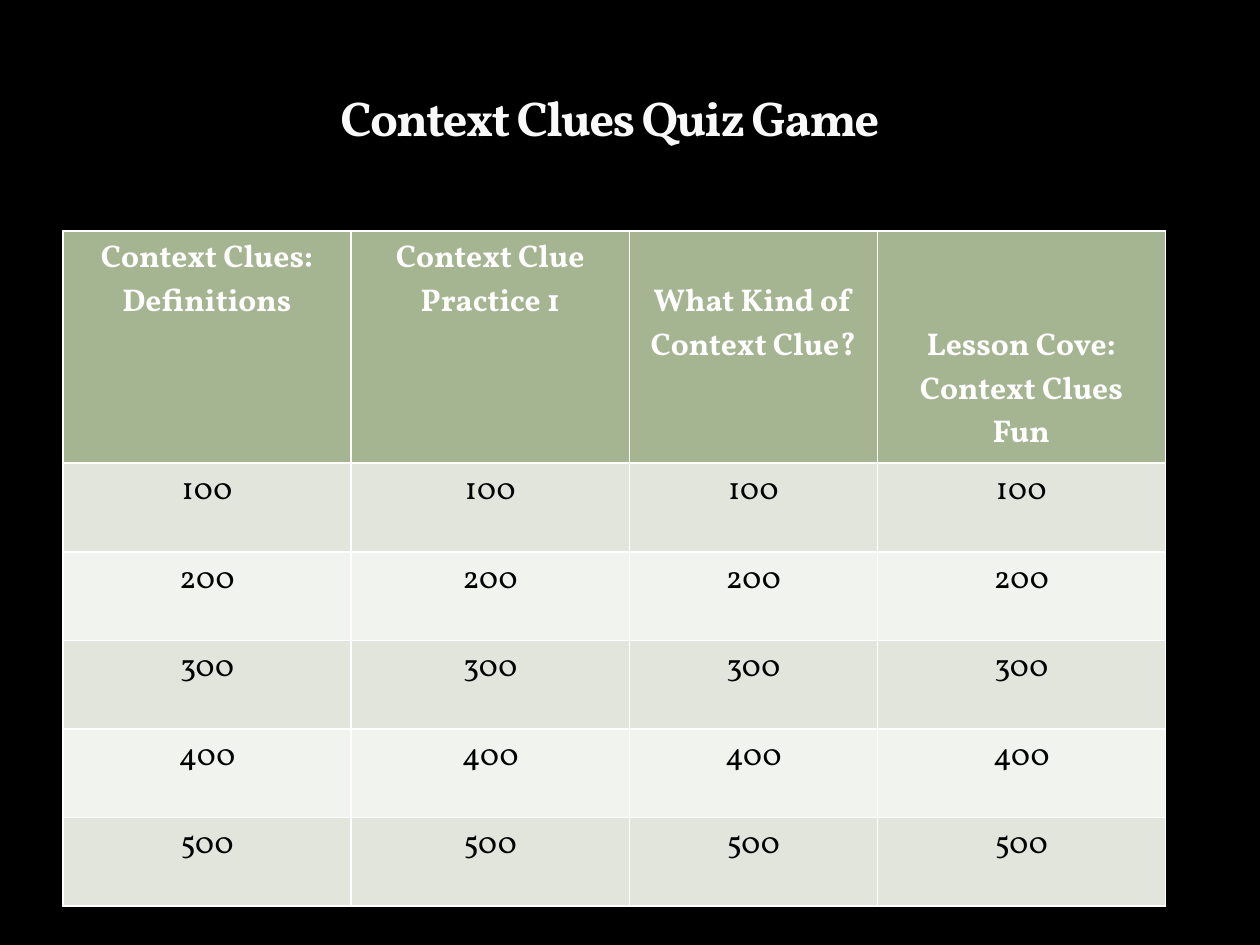
from lxml.etree import SubElement, fromstring
from pptx import Presentation
from pptx.dml.color import RGBColor
from pptx.enum.text import MSO_ANCHOR as Anchor, MSO_AUTO_SIZE as AutoSize, PP_ALIGN as Align
from pptx.oxml.ns import nsdecls, qn
from pptx.util import Pt

TITLE = "Context Clues Quiz Game"
CATEGORIES = [
    ("Context Clues: Definitions", 0),
    ("Context Clue Practice 1", 0),
    ("What Kind of Context Clue?", 1),
    ("Lesson Cove: Context Clues Fun", 2),
]
POINTS = [100, 200, 300, 400, 500]
COLUMN_WIDTHS = [164.6, 159.1, 141.7, 164.6]
HEADER_HEIGHT, ROW_HEIGHT = 132.6, 50.65
LINE_HEIGHT, CELL_MARGIN = 25.1, 3.6
TABLE_LEFT, TABLE_TOP = 36, 132

FONT = "Vollkorn"
BLACK = RGBColor(0, 0, 0)
WHITE = RGBColor(255, 255, 255)
TITLE_WHITE = RGBColor(0xF9, 0xF9, 0xF9)
HEADER_GREEN = RGBColor(0xA5, 0xB5, 0x92)
BANDS = [RGBColor(0xE1, 0xE5, 0xDC), RGBColor(0xF0, 0xF3, 0xEE)]
OUTLINE = RGBColor(0x3C, 0x44, 0x22)

TITLE_FORMAT = {"name": FONT, "size": Pt(28), "bold": True}
HEADER_FORMAT = {"name": FONT, "size": Pt(18), "bold": True}
POINTS_FORMAT = {"name": FONT, "size": Pt(18), "bold": False}


def set_text(text_frame, text, font_format, color):
    paragraph = text_frame.paragraphs[0]
    paragraph.alignment = Align.CENTER
    run = paragraph.add_run()
    run.text = text
    for name, value in font_format.items():
        setattr(run.font, name, value)
    run.font.color.rgb = color
    return run


def set_borders(cell):
    properties = cell._tc.get_or_add_tcPr()
    for tag in ("a:lnL", "a:lnR", "a:lnT", "a:lnB"):
        line = SubElement(properties, qn(tag), w=str(Pt(1)))
        fill = SubElement(line, qn("a:solidFill"))
        SubElement(fill, qn("a:srgbClr"), val=str(WHITE))


def fill_cell(cell, text, font_format, color, background):
    set_borders(cell)
    cell.fill.solid()
    cell.fill.fore_color.rgb = background
    set_text(cell.text_frame, text, font_format, color)


def add_title(slide):
    title = slide.shapes.title
    title.left, title.top, title.width, title.height = Pt(72), Pt(41.8), Pt(553), Pt(45.4)
    frame_format = {"vertical_anchor": Anchor.BOTTOM, "word_wrap": True, "auto_size": AutoSize.NONE}
    for name, value in frame_format.items():
        setattr(title.text_frame, name, value)
    run = set_text(title.text_frame, TITLE, TITLE_FORMAT, TITLE_WHITE)
    properties = run.font._element
    properties.set("spc", "-100")
    properties.insert(0, fromstring(
        f'<a:ln {nsdecls("a")} w="{Pt(0.25)}"><a:solidFill><a:srgbClr val="{OUTLINE}">'
        '<a:alpha val="25000"/></a:srgbClr></a:solidFill></a:ln>'))


def add_board(slide):
    height = HEADER_HEIGHT + ROW_HEIGHT * len(POINTS)
    table = slide.shapes.add_table(
        len(POINTS) + 1, len(CATEGORIES), Pt(TABLE_LEFT), Pt(TABLE_TOP),
        Pt(sum(COLUMN_WIDTHS)), Pt(height)).table
    for column, width in zip(table.columns, COLUMN_WIDTHS):
        column.width = Pt(width)
    for index, row in enumerate(table.rows):
        row.height = Pt(ROW_HEIGHT if index else HEADER_HEIGHT)
    for column, (category, lines_down) in enumerate(CATEGORIES):
        header = table.cell(0, column)
        header.margin_top = Pt(CELL_MARGIN + LINE_HEIGHT * lines_down)
        fill_cell(header, category, HEADER_FORMAT, WHITE, HEADER_GREEN)
        for index, points in enumerate(POINTS):
            fill_cell(table.cell(index + 1, column), str(points), POINTS_FORMAT,
                      BLACK, BANDS[index % 2])


def main():
    presentation = Presentation()
    presentation.slide_width, presentation.slide_height = Pt(720), Pt(540)
    slide = presentation.slides.add_slide(presentation.slide_layouts[5])
    slide.background.fill.solid()
    slide.background.fill.fore_color.rgb = BLACK
    add_title(slide)
    add_board(slide)
    presentation.save("out.pptx")


if __name__ == "__main__":
    main()
